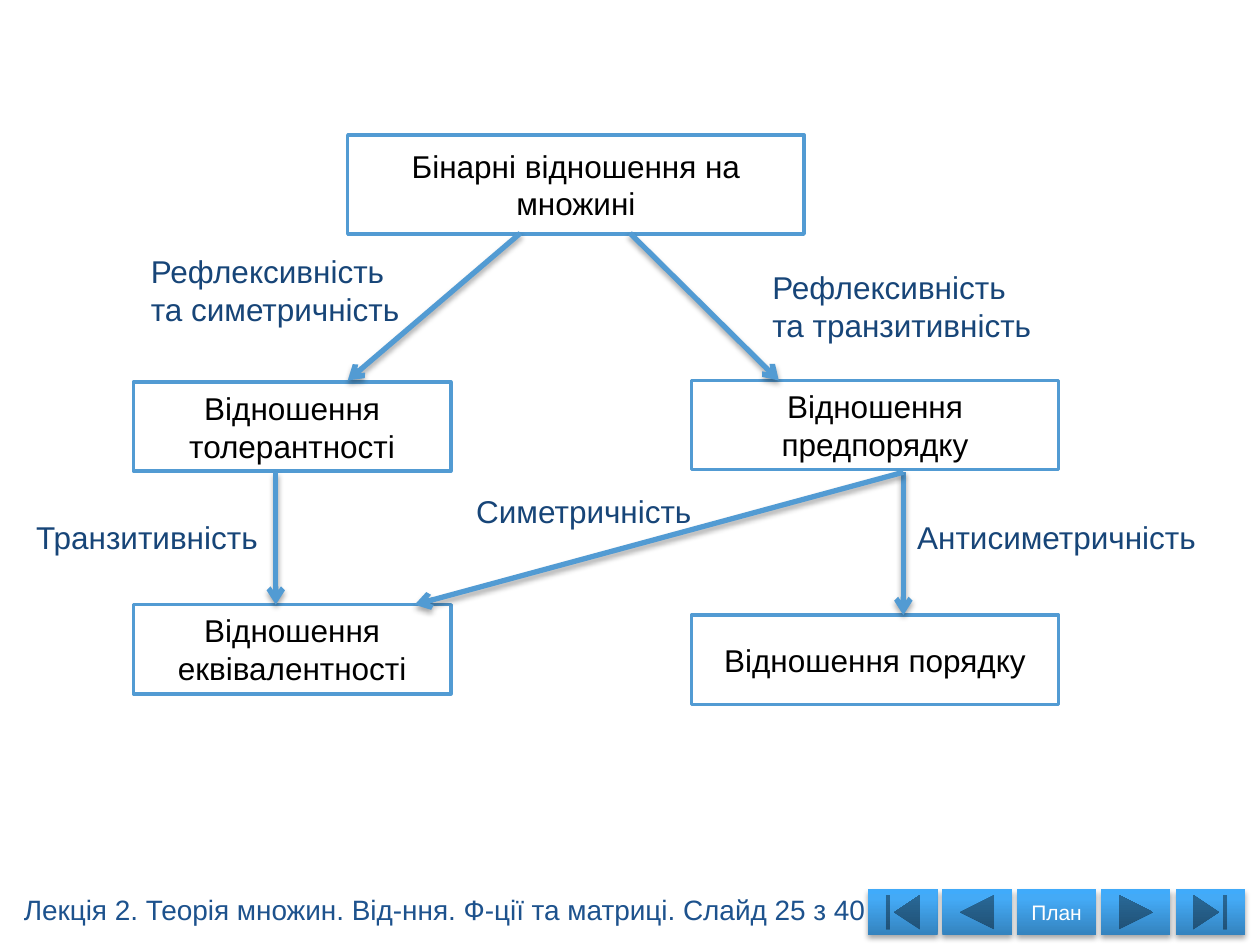
import copy

import pptx
import pptx.dml.color
import pptx.enum.shapes
import pptx.enum.text
import pptx.oxml
import pptx.oxml.ns
import pptx.util

Cm = pptx.util.Cm
Pt = pptx.util.Pt
RGBColor = pptx.dml.color.RGBColor
MSO_SHAPE = pptx.enum.shapes.MSO_SHAPE
PP_ALIGN = pptx.enum.text.PP_ALIGN
qn = pptx.oxml.ns.qn

WHITE = RGBColor(0xFF, 0xFF, 0xFF)
BLACK = RGBColor(0x00, 0x00, 0x00)
OUTLINE = RGBColor(0x52, 0x9B, 0xD3)
LABEL = RGBColor(0x17, 0x45, 0x78)
FOOTER = RGBColor(0x1D, 0x52, 0x8D)
BUTTON_STOPS = [
    (0, RGBColor(0x34, 0x83, 0xBE)),
    (0.8, RGBColor(0x44, 0xAA, 0xF6)),
    (1, RGBColor(0x40, 0xAB, 0xFB)),
]
SHADOW = (
    f'<a:effectLst {pptx.oxml.ns.nsdecls("a")}>'
    '<a:outerShdw blurRad="40000" dist="23000" dir="5400000" rotWithShape="0">'
    '<a:srgbClr val="000000"><a:alpha val="35000"/></a:srgbClr>'
    '</a:outerShdw></a:effectLst>'
)

BOXES = [
    ("Бінарні відношення на множині", 7.01, 2.72, 9.2, 2),
    ("Відношення толерантності", 2.69, 7.7, 6.4, 1.8),
    ("Відношення предпорядку", 13.94, 7.67, 7.4, 1.8),
    ("Відношення еквівалентності", 2.69, 12.19, 6.4, 1.8),
    ("Відношення порядку", 13.94, 12.4, 7.4, 1.8),
]
ARROWS = [
    (10.49, 4.7, 7.01, 7.67),
    (12.7, 4.7, 15.7, 7.67),
    (18.21, 9.52, 18.21, 12.4),
    (18.21, 9.52, 8.36, 12.19),
    (5.56, 9.52, 5.56, 12.19),
]
LABELS = [
    (["Рефлексивність", "та симетричність"], 2.79, 4.95, 5.56, 1.8),
    (["Рефлексивність", "та транзитивність"], 15.32, 5.28, 5.79, 1.8),
    (["Транзитивність"], 0.48, 10.31, 5.03, 1.02),
    (["Симетричність"], 9.35, 9.8, 4.9, 1.02),
    (["Антисиметричність"], 18.24, 10.31, 6.2, 1.02),
]
BUTTONS = [
    (MSO_SHAPE.ACTION_BUTTON_BEGINNING, 1.4, None),
    (MSO_SHAPE.ACTION_BUTTON_BACK_OR_PREVIOUS, 1.4, None),
    (MSO_SHAPE.ACTION_BUTTON_CUSTOM, 1.6, "План"),
    (MSO_SHAPE.ACTION_BUTTON_FORWARD_OR_NEXT, 1.4, None),
    (MSO_SHAPE.ACTION_BUTTON_END, 1.4, None),
]
BUTTON_LEFT, BUTTON_TOP, BUTTON_HEIGHT, BUTTON_GAP = 17.5, 17.93, 0.92, 0.1


def set_all(target, values):
    for name, value in values.items():
        setattr(target, name, value)


def write(tf, lines, size, color, align):
    for i, line in enumerate(lines):
        p = tf.paragraphs[0] if i == 0 else tf.add_paragraph()
        p.alignment = align
        r = p.add_run()
        r.text = line
        set_all(r.font, {"name": "Arial", "size": Pt(size)})
        r.font.color.rgb = color


def add_shadow(sp):
    sp._element.spPr.append(pptx.oxml.parse_xml(SHADOW))


def add_box(shapes, text, *place):
    sp = shapes.add_shape(MSO_SHAPE.RECTANGLE, *map(Cm, place))
    sp.shadow.inherit = False
    sp.fill.solid()
    sp.fill.fore_color.rgb = WHITE
    sp.line.color.rgb = OUTLINE
    sp.line.width = Pt(2)
    set_all(sp.text_frame, {
        "word_wrap": True,
        "vertical_anchor": pptx.enum.text.MSO_ANCHOR.MIDDLE,
    })
    write(sp.text_frame, [text], 18, BLACK, PP_ALIGN.CENTER)


def add_arrow(shapes, *ends):
    line = shapes.add_connector(
        pptx.enum.shapes.MSO_CONNECTOR.STRAIGHT, *map(Cm, ends))
    line.line.color.rgb = OUTLINE
    line.line.width = Pt(3)
    tail = pptx.oxml.parse_xml(
        f'<a:tailEnd {pptx.oxml.ns.nsdecls("a")} type="arrow"/>')
    line._element.spPr.find(qn("a:ln")).append(tail)
    add_shadow(line)


def add_label(shapes, lines, place, size=18, color=LABEL):
    tf = shapes.add_textbox(*map(Cm, place)).text_frame
    set_all(tf, {
        "word_wrap": False,
        "auto_size": pptx.enum.text.MSO_AUTO_SIZE.SHAPE_TO_FIT_TEXT,
    })
    write(tf, lines, size, color, PP_ALIGN.LEFT)


def add_button(shapes, kind, text, *place):
    sp = shapes.add_shape(kind, *map(Cm, place))
    sp.fill.gradient()
    sp.fill.gradient_angle = 90
    stops = sp._element.spPr.find(".//" + qn("a:gsLst"))
    stops.append(copy.deepcopy(stops[-1]))
    for stop, (position, color) in zip(sp.fill.gradient_stops, BUTTON_STOPS):
        stop.position = position
        stop.color.rgb = color
    sp.line.fill.background()
    add_shadow(sp)
    if text:
        set_all(sp.text_frame, {
            "word_wrap": True,
            "vertical_anchor": pptx.enum.text.MSO_ANCHOR.MIDDLE,
        })
        write(sp.text_frame, [text], 12, WHITE, PP_ALIGN.CENTER)


def add_navigation(shapes):
    left = BUTTON_LEFT
    for kind, width, text in BUTTONS:
        add_button(shapes, kind, text, left, BUTTON_TOP, width, BUTTON_HEIGHT)
        left += width + BUTTON_GAP


def main():
    prs = pptx.Presentation()
    set_all(prs, {"slide_width": Cm(25.4), "slide_height": Cm(19.05)})
    s = prs.slides.add_slide(prs.slide_layouts[6])
    diagram = s.shapes.add_group_shape().shapes
    for box in BOXES:
        add_box(diagram, *box)
    for arrow in ARROWS:
        add_arrow(diagram, *arrow)
    for lines, *place in LABELS:
        add_label(diagram, lines, place)
    add_navigation(s.shapes.add_group_shape().shapes)
    add_label(
        s.shapes,
        ["Лекція 2. Теорія множин. Від-ння. Ф-ції та матриці. Слайд 25 з 40"],
        (0.23, 17.86, 17.73, 0.94), 16, FOOTER)
    prs.save("out.pptx")


if __name__ == "__main__":
    main()
